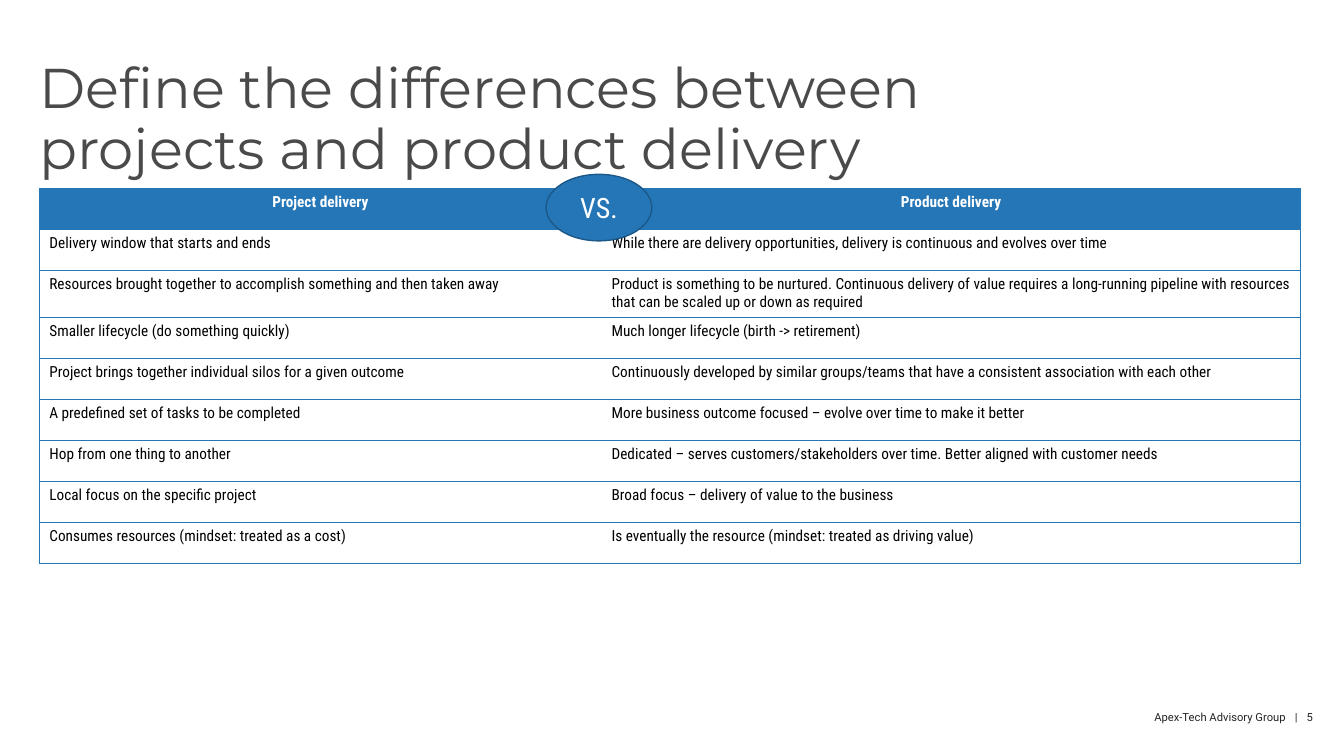
from lxml.etree import SubElement
from pptx import Presentation
from pptx.dml.color import RGBColor
from pptx.enum.shapes import MSO_SHAPE
from pptx.enum.text import MSO_ANCHOR, PP_ALIGN
from pptx.oxml.ns import qn
from pptx.util import Pt

# Content
TITLE = "Define the differences between projects and product delivery"
BADGE = "VS."
FOOTER = ("Apex-Tech Advisory Group", "|", "5")
ROWS = [
    ("Project delivery", "Product delivery"),
    ("Delivery window that starts and ends",
     "While there are delivery opportunities, delivery is continuous and evolves over time"),
    ("Resources brought together to accomplish something and then taken away",
     "Product is something to be nurtured. Continuous delivery of value requires "
     "a long-running pipeline with resources that can be scaled up or down as required"),
    ("Smaller lifecycle (do something quickly)",
     "Much longer lifecycle (birth -> retirement)"),
    ("Project brings together individual silos for a given outcome",
     "Continuously developed by similar groups/teams that have a consistent "
     "association with each other"),
    ("A predefined set of tasks to be completed",
     "More business outcome focused – evolve over time to make it better"),
    ("Hop from one thing to another",
     "Dedicated – serves customers/stakeholders over time. Better aligned with customer needs"),
    ("Local focus on the specific project",
     "Broad focus – delivery of value to the business"),
    ("Consumes resources (mindset: treated as a cost)",
     "Is eventually the resource (mindset: treated as driving value)"),
]

THEME = {
    "blue": "2576B7", "edge": "1B5787", "white": "FFFFFF",
    "black": "000000", "gray": "4A4A4A", "dark": "242424",
    "head": "Montserrat", "body": "Roboto Condensed", "foot": "Roboto",
    "title": 40, "badge": 20, "cell": 10.9, "note": 8,
}

# Layout in points
WIDTH, HEIGHT = 960.48, 540
LEFT, TOP = 28.08, 134.64
COLS = (401.76, 499.68)
ROW = 29.3
GAP = 4.4


def color(name):
    return RGBColor.from_string(THEME[name])


def write(frame, text, size="cell", font="body", ink="black", bold=False,
          align=PP_ALIGN.LEFT, line=None, gap=0):
    """Fill the first paragraph; a tuple becomes parts set apart by a wide space."""
    para = frame.paragraphs[0]
    para.alignment = align
    if line:
        para.line_spacing = line
    parts = [text] if isinstance(text, str) else " ".join(text).replace(" | ", "\n \n|\n \n").split("\n")
    for part in parts:
        run = para.add_run()
        run.text = part
        run.font.size = Pt(THEME[size])
        run.font.name = THEME[font]
        run.font.bold = bold
        run.font.color.rgb = color(ink)
        if part == " ":
            run._r.get_or_add_rPr().set("spc", str(round(gap * 100)))


def add_box(slide, x, y, w, h, right=0):
    frame = slide.shapes.add_textbox(Pt(x), Pt(y), Pt(w), Pt(h)).text_frame
    frame.word_wrap = True
    frame.margin_left = frame.margin_top = frame.margin_bottom = 0
    frame.margin_right = Pt(right)
    return frame


def set_edges(cell, shown):
    props = cell._tc.get_or_add_tcPr()
    for side in "LRTB":
        edge = SubElement(props, qn("a:ln" + side), w=str(Pt(1)))
        if side in shown:
            fill = SubElement(edge, qn("a:solidFill"))
            SubElement(fill, qn("a:srgbClr"), val=THEME["blue"])
        else:
            SubElement(edge, qn("a:noFill"))


def add_grid(slide):
    grid = slide.shapes.add_table(len(ROWS), len(COLS), Pt(LEFT), Pt(TOP),
                                  Pt(sum(COLS)), Pt(ROW * len(ROWS))).table
    grid.first_row = grid.horz_banding = False
    for col, width in zip(grid.columns, COLS):
        col.width = Pt(width)
    for r, texts in enumerate(ROWS):
        grid.rows[r].height = Pt(ROW)
        top = r == 0
        for c, text in enumerate(texts):
            cell = grid.cell(r, c)
            set_edges(cell, "TB" + "LR"[c])
            cell.fill.solid()
            cell.fill.fore_color.rgb = color("blue" if top else "white")
            write(cell.text_frame, text, ink="white" if top else "black", bold=top,
                  align=PP_ALIGN.CENTER if top else PP_ALIGN.LEFT)


def add_badge(slide):
    oval = slide.shapes.add_shape(MSO_SHAPE.OVAL, Pt(390.24), Pt(124.56), Pt(75.6), Pt(47.52))
    oval.shadow.inherit = False
    oval.fill.solid()
    oval.fill.fore_color.rgb = color("blue")
    oval.line.color.rgb = color("edge")
    oval.line.width = Pt(1)
    oval.text_frame.vertical_anchor = MSO_ANCHOR.MIDDLE
    write(oval.text_frame, BADGE, size="badge", ink="white", align=PP_ALIGN.CENTER)


def main():
    deck = Presentation()
    deck.slide_width, deck.slide_height = Pt(WIDTH), Pt(HEIGHT)
    slide = deck.slides.add_slide(deck.slide_layouts[6])

    # Footer and title
    write(add_box(slide, 693.36, 507.6, 252, 9.4, right=7.2), FOOTER, size="note",
          font="foot", ink="dark", align=PP_ALIGN.RIGHT, gap=GAP)
    write(add_box(slide, LEFT, 43.2, 705.6, 89.28), TITLE, size="title",
          font="head", ink="gray", line=0.9)

    # Comparison table with its badge on top
    add_grid(slide)
    add_badge(slide)
    deck.save("out.pptx")


if __name__ == "__main__":
    main()
